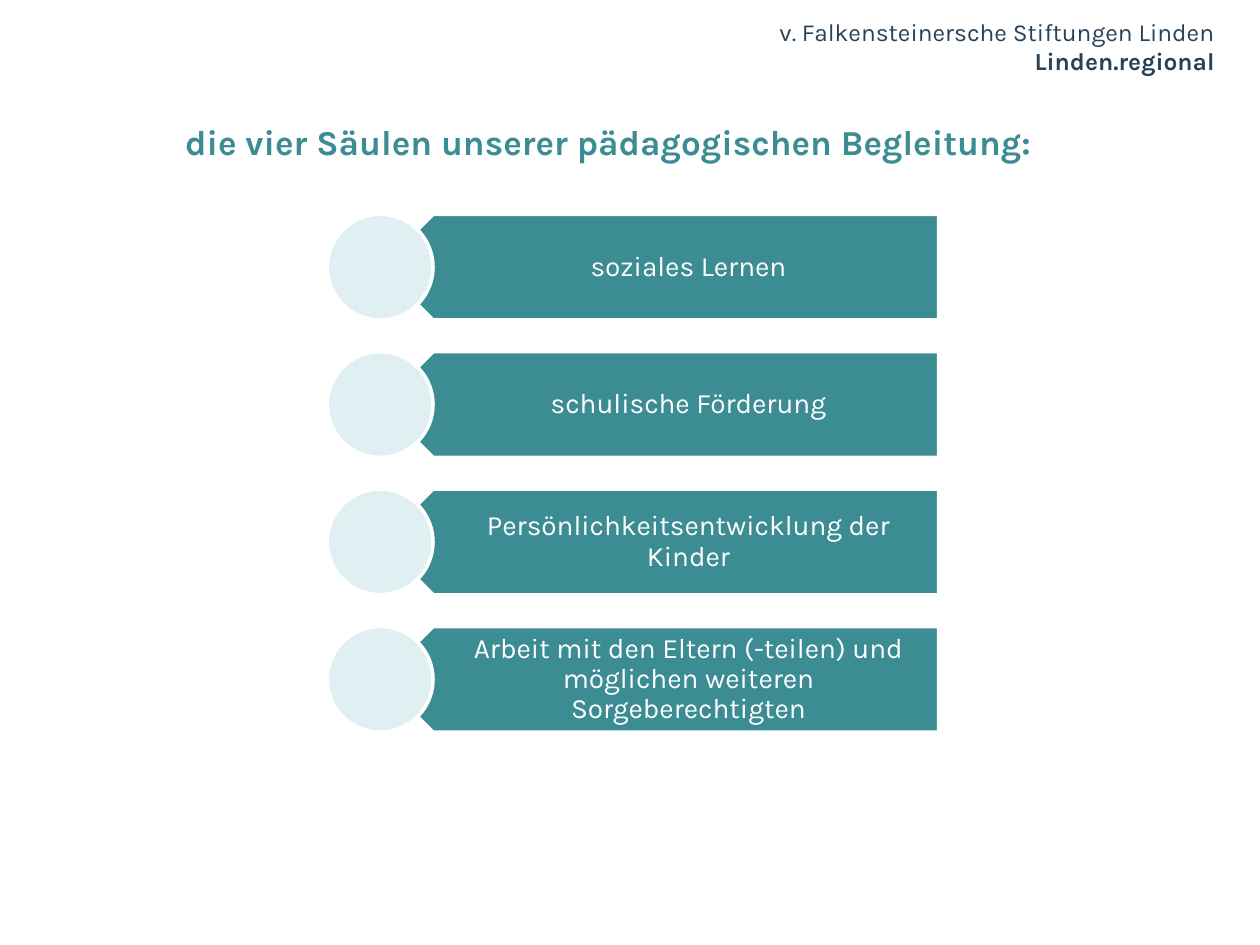
from dataclasses import dataclass

from pptx import Presentation
from pptx.dml.color import RGBColor
from pptx.enum.shapes import MSO_SHAPE
from pptx.enum.text import MSO_ANCHOR, PP_ALIGN
from pptx.util import Cm, Pt

ORGANISATION = ("v. Falkensteinersche Stiftungen Linden", "Linden.regional")
TITLE = "die vier Säulen unserer pädagogischen Begleitung:"
PILLARS = [
    "soziales Lernen",
    "schulische Förderung",
    "Persönlichkeitsentwicklung der Kinder",
    "Arbeit mit den Eltern (-teilen) und möglichen weiteren Sorgeberechtigten",
]


@dataclass(frozen=True)
class Theme:
    """Colours, font and type sizes of the slide."""

    font: str = "Karla"
    navy: RGBColor = RGBColor(0x28, 0x41, 0x56)
    teal: RGBColor = RGBColor(0x3C, 0x8C, 0x93)
    pale: RGBColor = RGBColor(0xE0, 0xF0, 0xF2)
    white: RGBColor = RGBColor(0xFF, 0xFF, 0xFF)
    header_size: int = 14
    title_size: int = 20
    pillar_size: int = 16
    outline: int = 2


THEME = Theme()
DEFAULT_INSETS = (0.25, 0.13, 0.25, 0.13)
PILLAR_INSETS = (0.94, 0.18, 0.3, 0.18)
CIRCLE_LEFT, FIRST_TOP, PILLAR_RIGHT = 6.6, 4.32, 18.92
CIRCLE_SIZE, PILLAR_PITCH = 2.13, 2.77


def add_text(slide, box, text, size, color, align, anchor, insets=DEFAULT_INSETS):
    """Add a wrapped text box and return its paragraph."""
    text_frame = slide.shapes.add_textbox(*map(Cm, box)).text_frame
    text_frame.word_wrap = True
    text_frame.vertical_anchor = anchor
    (text_frame.margin_left, text_frame.margin_top,
     text_frame.margin_right, text_frame.margin_bottom) = map(Cm, insets)
    text_frame.text = text
    paragraph = text_frame.paragraphs[0]
    paragraph.alignment = align
    for run in paragraph.runs:
        run.font.name = THEME.font
        run.font.size = Pt(size)
        run.font.color.rgb = color
    return paragraph


def add_outlined_shape(slide, kind, box, fill, rotation=0):
    """Add a filled preset shape with a white outline."""
    shape = slide.shapes.add_shape(kind, *map(Cm, box))
    shape.shadow.inherit = False
    shape.rotation = rotation
    shape.fill.solid()
    shape.fill.fore_color.rgb = fill
    shape.line.color.rgb = THEME.white
    shape.line.width = Pt(THEME.outline)


def add_pillar(slide, text, top):
    """Add one arrow bar with its label and circle."""
    bar_left = CIRCLE_LEFT + CIRCLE_SIZE / 2
    label_left = bar_left + CIRCLE_SIZE / 4
    add_outlined_shape(slide, MSO_SHAPE.PENTAGON,
                       (bar_left, top, PILLAR_RIGHT - bar_left, CIRCLE_SIZE),
                       THEME.teal, rotation=180)
    label = add_text(slide, (label_left, top, PILLAR_RIGHT - label_left, CIRCLE_SIZE),
                     text, THEME.pillar_size, THEME.white,
                     PP_ALIGN.CENTER, MSO_ANCHOR.MIDDLE, PILLAR_INSETS)
    label.line_spacing = 0.9
    add_outlined_shape(slide, MSO_SHAPE.OVAL,
                       (CIRCLE_LEFT, top, CIRCLE_SIZE, CIRCLE_SIZE), THEME.pale)


def main():
    """Build and save the slide."""
    presentation = Presentation()
    presentation.slide_width, presentation.slide_height = Cm(25.4), Cm(19.05)
    slide = presentation.slides.add_slide(presentation.slide_layouts[6])

    header = add_text(slide, (10.49, 0.25, 14, 1.27), "\v".join(ORGANISATION),
                      THEME.header_size, THEME.navy,
                      PP_ALIGN.RIGHT, MSO_ANCHOR.BOTTOM, (0, 0, 0, 0))
    header.runs[-1].font.bold = True

    for index, text in enumerate(PILLARS):
        add_pillar(slide, text, FIRST_TOP + index * PILLAR_PITCH)

    title = add_text(slide, (1.57, 2.29, 21.39, 1.6), TITLE, THEME.title_size,
                     THEME.teal, PP_ALIGN.CENTER, MSO_ANCHOR.TOP)
    title.runs[0].font.bold = True

    presentation.save("out.pptx")


if __name__ == "__main__":
    main()
